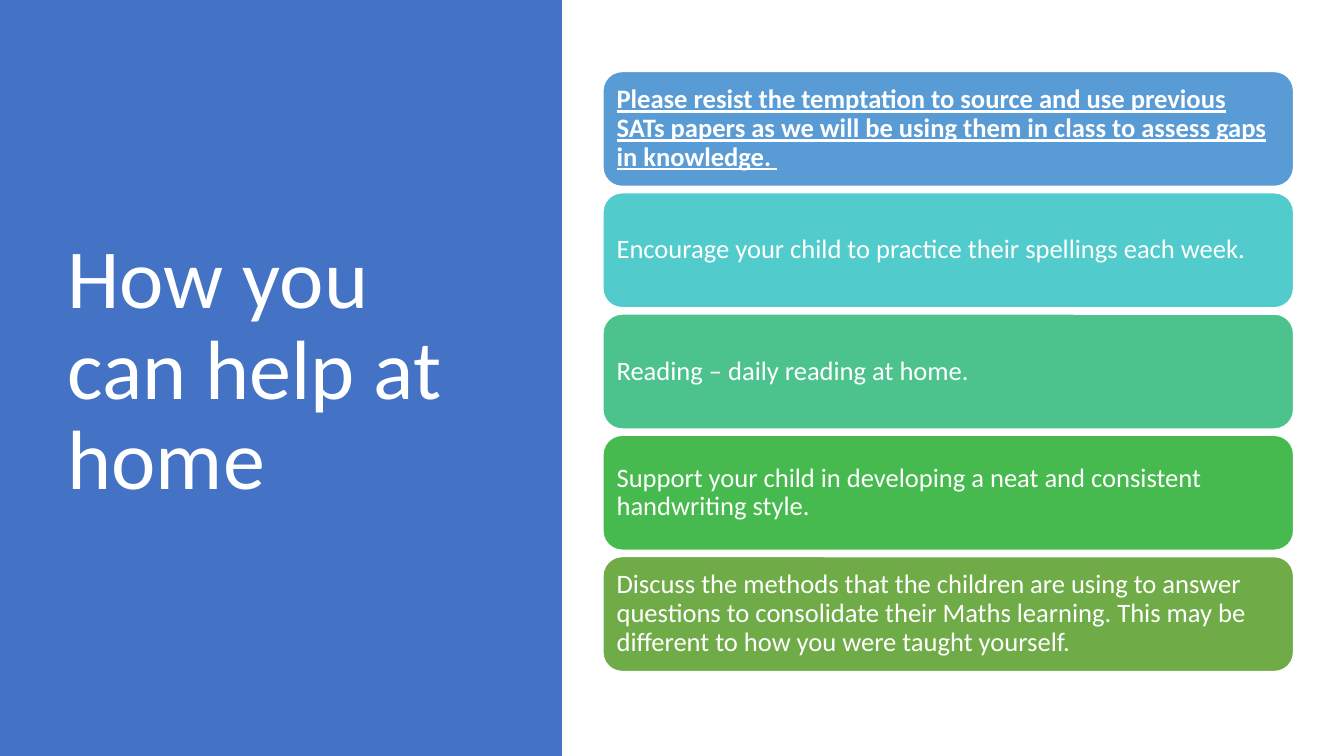
from typing import NamedTuple

from pptx import Presentation
from pptx.dml.color import RGBColor
from pptx.enum.shapes import MSO_SHAPE
from pptx.enum.text import MSO_ANCHOR, MSO_AUTO_SIZE, PP_ALIGN
from pptx.util import Inches, Pt

COLOURS = {
    "panel": "4472C4",
    "white": "FFFFFF",
    "blue": "599BD5",
    "turquoise": "52CBCC",
    "mint": "4CC38C",
    "green": "46BA4E",
    "olive": "6FAB46",
}
FONT = "Calibri"
SLIDE_WIDTH, SLIDE_HEIGHT = Inches(13.33), Inches(7.5)
PANEL_SHARE = 0.418

# The advice cards form one column of evenly spaced rows, in inches.
COLUMN_LEFT, COLUMN_WIDTH = 5.98, 6.85
FIRST_ROW_TOP, ROW_STEP, CARD_HEIGHT = 0.71, 1.203, 1.14


class Advice(NamedTuple):
    text: str
    colour: str
    emphasised: bool = False


ADVICE = [
    Advice("Please resist the temptation to source and use previous SATs papers "
           "as we will be using them in class to assess gaps in knowledge. ",
           "blue", emphasised=True),
    Advice("Encourage your child to practice their spellings each week.", "turquoise"),
    Advice("Reading – daily reading at home.", "mint"),
    Advice("Support your child in developing a neat and consistent handwriting style.",
           "green"),
    Advice("Discuss the methods that the children are using to answer questions to "
           "consolidate their Maths learning. This may be different to how you were "
           "taught yourself.", "olive"),
]


def colour(name: str) -> RGBColor:
    return RGBColor.from_string(COLOURS[name])


def fill_shape(shape, name: str) -> None:
    shape.shadow.inherit = False
    shape.fill.solid()
    shape.fill.fore_color.rgb = colour(name)


def write_text(shape, text: str, size: float):
    """Put one white, left-aligned, vertically centred paragraph in a shape."""
    frame = shape.text_frame
    frame.text = text
    frame.word_wrap = True
    frame.auto_size = MSO_AUTO_SIZE.NONE
    frame.vertical_anchor = MSO_ANCHOR.MIDDLE
    para = frame.paragraphs[0]
    para.alignment = PP_ALIGN.LEFT
    para.line_spacing = 0.9
    para.font.name = FONT
    para.font.size = Pt(size)
    para.font.color.rgb = colour("white")
    return para


def add_title_panel(page) -> None:
    title = page.shapes.title
    title.left, title.top = Inches(0.57), Inches(0.68)
    title.width, title.height = Inches(4.16), Inches(6.02)
    write_text(title, "How you can help at home", 60)

    panel = page.shapes.add_shape(
        MSO_SHAPE.RECTANGLE, 0, 0, int(SLIDE_WIDTH * PANEL_SHARE), SLIDE_HEIGHT)
    fill_shape(panel, "panel")
    panel.line.fill.background()
    title.element.addprevious(panel.element)


def add_card(page, row: int, advice: Advice) -> None:
    card = page.shapes.add_shape(
        MSO_SHAPE.ROUNDED_RECTANGLE,
        Inches(COLUMN_LEFT), Inches(FIRST_ROW_TOP + row * ROW_STEP),
        Inches(COLUMN_WIDTH), Inches(CARD_HEIGHT))
    card.adjustments[0] = 1 / 6
    fill_shape(card, advice.colour)
    card.line.color.rgb = colour("white")
    card.line.width = Pt(1)

    para = write_text(card, advice.text, 19)
    para.font.bold = advice.emphasised
    para.font.underline = advice.emphasised
    frame = card.text_frame
    frame.margin_left = frame.margin_right = Inches(0.08)
    frame.margin_top = frame.margin_bottom = Inches(0.08)


def main() -> None:
    deck = Presentation()
    deck.slide_width, deck.slide_height = SLIDE_WIDTH, SLIDE_HEIGHT
    page = deck.slides.add_slide(deck.slide_layouts.get_by_name("Title Only"))
    add_title_panel(page)
    for row, advice in enumerate(ADVICE):
        add_card(page, row, advice)
    deck.save("out.pptx")


if __name__ == "__main__":
    main()
